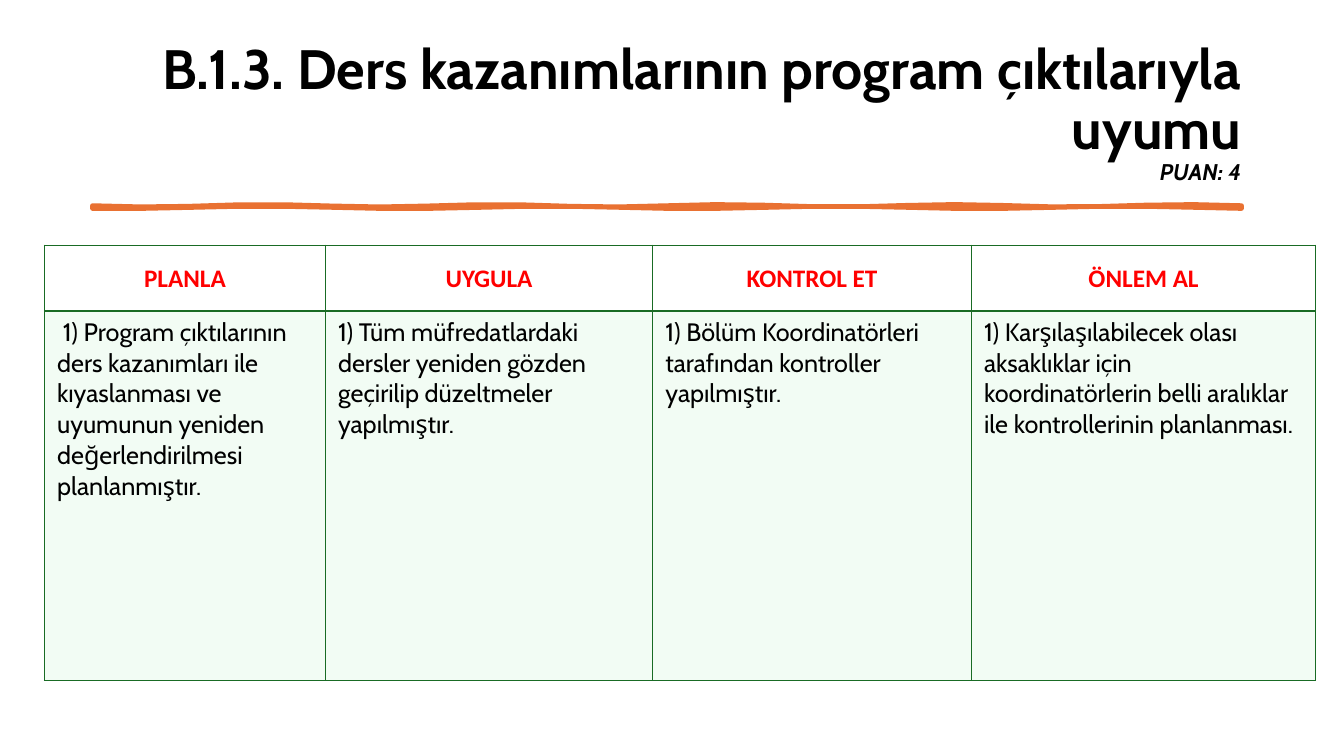
import math

from lxml import etree
from pptx import Presentation
from pptx import util as u
from pptx.dml.color import RGBColor
from pptx.enum import text
from pptx.oxml.ns import qn

BLACK = RGBColor(0x00, 0x00, 0x00)
RED = RGBColor(0xFF, 0x00, 0x00)
ORANGE = RGBColor(0xE9, 0x71, 0x32)
GREEN = RGBColor(0x19, 0x6B, 0x24)
MINT = RGBColor(0xC2, 0xF1, 0xC8)

STAGES = [
    ("PLANLA", 7.08, " 1) Program çıktılarının ders kazanımları ile kıyaslanması ve "
                     "uyumunun yeniden değerlendirilmesi planlanmıştır."),
    ("UYGULA", 8.25, "1) Tüm müfredatlardaki dersler yeniden gözden geçirilip "
                     "düzeltmeler yapılmıştır."),
    ("KONTROL ET", 8.03, "1) Bölüm Koordinatörleri tarafından kontroller yapılmıştır."),
    ("ÖNLEM AL", 8.68, "1) Karşılaşılabilecek olası aksaklıklar için koordinatörlerin "
                       "belli aralıklar ile kontrollerinin planlanması."),
]


def write(para, words, size=18, font="Cabin", color=BLACK, bold=False, italic=False):
    """Add a formatted span of words to a paragraph."""
    span = para.add_run()
    span.text = words
    span.font.size = u.Pt(size)
    span.font.name = font
    span.font.color.rgb = color
    span.font.bold = bold
    span.font.italic = italic


def add_title(page, left, top, width, height):
    """Place the right-aligned heading with its score below."""
    box = page.shapes.add_textbox(u.Cm(left), u.Cm(top), u.Cm(width), u.Cm(height))
    frame = box.text_frame
    frame.word_wrap = True
    frame.vertical_anchor = text.MSO_ANCHOR.MIDDLE
    para = frame.paragraphs[0]
    para.alignment = text.PP_ALIGN.RIGHT
    para.line_spacing = 0.9
    write(para, "B.1.3. Ders kazanımlarının program çıktılarıyla uyumu", size=39.6, bold=True)
    para.add_line_break()
    write(para, "PUAN: 4", size=16.2, bold=True, italic=True)


def add_brush_rule(page, left, top, width, height):
    """Draw a hand-drawn rule whose two edges waver independently."""
    steps = 24
    upper, lower = [], []
    for step in range(steps + 1):
        x = left + width * step / steps
        turn = math.tau * step / steps
        upper.append((u.Cm(x), u.Cm(top + 0.03 * math.sin(5 * turn))))
        lower.append((u.Cm(x), u.Cm(top + height + 0.03 * math.sin(4 * turn + 1))))
    outline = upper + lower[::-1]
    builder = page.shapes.build_freeform(*outline[0])
    builder.add_line_segments(outline[1:], close=True)
    rule = builder.convert_to_shape()
    rule.shadow.inherit = False
    rule.fill.solid()
    rule.fill.fore_color.rgb = ORANGE
    rule.line.color.rgb = ORANGE
    rule.line.width = u.Pt(3.25)


def set_borders(cell, bottom=1):
    """Give a cell green borders, 1 pt wide except for the bottom one."""
    properties = cell._tc.get_or_add_tcPr()
    for side, points in (("a:lnL", 1), ("a:lnR", 1), ("a:lnT", 1), ("a:lnB", bottom)):
        line = etree.SubElement(properties, qn(side), w=str(u.Pt(points)))
        fill = etree.SubElement(line, qn("a:solidFill"))
        etree.SubElement(fill, qn("a:srgbClr"), val=str(GREEN))


def set_margins(cell, side, edge):
    """Set the horizontal and vertical padding of a cell."""
    cell.margin_left = cell.margin_right = u.Cm(side)
    cell.margin_top = cell.margin_bottom = u.Cm(edge)


def add_stage_table(page, left, top, header_height, body_height):
    """Place the four-stage table with a header row and a tinted body row."""
    width = sum(stage[1] for stage in STAGES)
    table = page.shapes.add_table(
        2, len(STAGES), u.Cm(left), u.Cm(top), u.Cm(width), u.Cm(header_height + body_height)
    ).table
    table.first_row = table.horz_banding = False
    table.rows[0].height = u.Cm(header_height)
    table.rows[1].height = u.Cm(body_height)
    for index, (name, column_width, action) in enumerate(STAGES):
        table.columns[index].width = u.Cm(column_width)
        header, body = table.cell(0, index), table.cell(1, index)
        set_borders(header, bottom=2)
        set_borders(body)

        header.fill.background()
        header.vertical_anchor = text.MSO_ANCHOR.MIDDLE
        set_margins(header, 0.13, 0)
        para = header.text_frame.paragraphs[0]
        para.alignment = text.PP_ALIGN.CENTER
        para.line_spacing = 1.07
        para.space_after = u.Pt(8)
        write(para, name, font="Calibri", color=RED, bold=True)

        body.fill.solid()
        body.fill.fore_color.rgb = MINT
        tint = body._tc.tcPr.find(qn("a:solidFill")).find(qn("a:srgbClr"))
        etree.SubElement(tint, qn("a:alpha"), val="20000")
        set_margins(body, 0.32, 0.16)
        write(body.text_frame.paragraphs[0], action)


def main():
    """Build the slide and save the deck."""
    deck = Presentation()
    deck.slide_width, deck.slide_height = u.Cm(33.87), u.Cm(19.05)
    page = deck.slides.add_slide(deck.slide_layouts[6])
    add_title(page, 2.33, 1.02, 29.2, 3.68)
    add_brush_rule(page, 2.33, 5.18, 28.96, 0.05)
    add_stage_table(page, 1.12, 6.18, 1.65, 9.32)
    deck.save("out.pptx")


if __name__ == "__main__":
    main()
